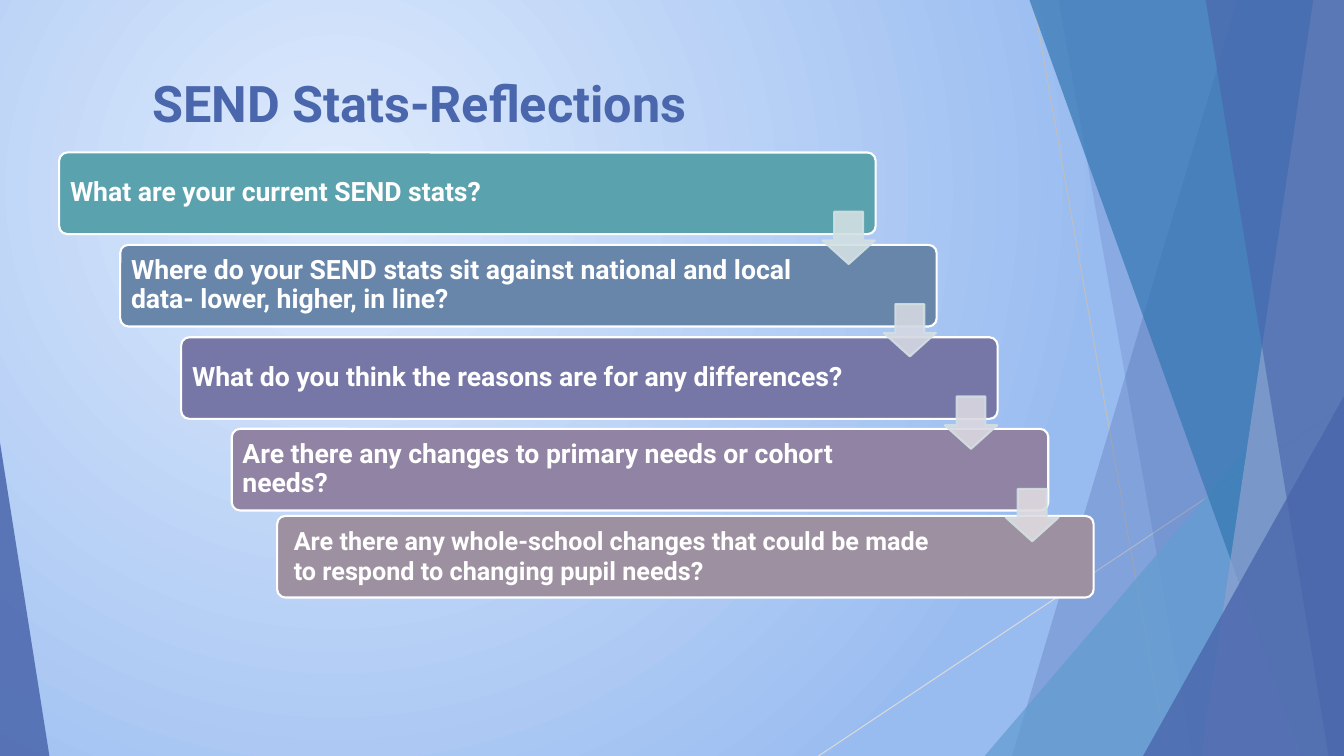
"""Build the SEND statistics reflection slide with its staircase of questions."""
from dataclasses import dataclass

from lxml import etree
from pptx import Presentation
from pptx import util as u
from pptx.dml.color import RGBColor
from pptx.dml.fill import FillFormat
from pptx.enum import shapes, text
from pptx.oxml.ns import qn
from pptx.shapes.autoshape import Shape
from pptx.slide import Slide
from pptx.text.text import TextFrame

WIDTH, HEIGHT = 960, 540
TOP_EDGE = -0.7
FONT = "Roboto"
BLUE, WHITE = "4A66AC", "FFFFFF"
CARD_WIDTH, CARD_HEIGHT = 583.2, 58.3
ARROW_SIZE = 37.4
ARROW_LEFT, ARROW_TOP = 587.5, 151.2
ARROW_STEP_X, ARROW_STEP_Y = 43.7, 66


@dataclass
class Ray:
    start: tuple[float, float]
    end: tuple[float, float]
    colour: str


@dataclass
class Band:
    top_left: float
    bottom_left: float
    colour: str
    opacity: int


@dataclass
class Corner:
    left: float
    top: float
    width: float
    apex: float
    colour: str
    opacity: int


@dataclass
class Label:
    left: float
    top: float
    width: float
    height: float = 54.7
    size: float = 19
    inset_x: float = 6
    inset_y: float = 6
    spacing: float = 0.9
    anchor: text.MSO_ANCHOR = text.MSO_ANCHOR.MIDDLE


@dataclass
class Question:
    wording: str
    left: float
    top: float
    colour: str
    label: Label


RAYS = [
    Ray((738, 0), (833.8, HEIGHT), "BFBFBF"),
    Ray((WIDTH, 290.2), (584.6, HEIGHT), "D9D9D9"),
]
FACETS = [
    Band(884.2, 722.9, BLUE, 30),
    Band(756, 851.8, BLUE, 20),
    Corner(703.4, 239.8, 256.6, 1, "629DD1", 72),
    Band(735.1, 929.5, "3477B2", 70),
    Band(938.2, 858.2, "90A2CF", 70),
    Band(861.1, 949, BLUE, 65),
    Corner(816.5, 283, 143.5, 1, BLUE, 80),
    Corner(0, 316.1, 35.3, 0, BLUE, 85),
]
QUESTIONS = [
    Question("What are your current SEND stats?",
             42.3, 108.9, "5AA2AE", Label(44, 110.7, 514)),
    Question("Where do your SEND stats sit against national and local data- lower, higher, in line?",
             85.9, 174.9, "6885AA", Label(87.6, 176.6, 498.2)),
    Question("What do you think the reasons are for any differences?",
             129.4, 240.9, "7677A6", Label(131.2, 242.6, 498.2)),
    Question("Are there any changes to primary needs or cohort needs?",
             165.6, 306.3, "9083A3", Label(167.2, 308, 498.2)),
    Question("Are there any whole-school changes that could be made to respond to changing pupil needs?",
             198, 368.5, "9D90A0",
             Label(202.8, 371.5, 480.2, 51, 18, 7.2, 3.6, 1, text.MSO_ANCHOR.TOP)),
]
ARROW_COLOURS = ["D2E0E3", "D5D8E2", "DAD8E0", "DFDBDF"]


def rgb(colour: str) -> RGBColor:
    return RGBColor.from_string(colour)


def paint(fill: FillFormat, colour: str) -> None:
    fill.solid()
    fill.fore_color.rgb = rgb(colour)


def style(shape: Shape, colour: str, outline: str | None = None, opacity: int = 100) -> None:
    shape.shadow.inherit = False
    paint(shape.fill, colour)
    if outline:
        paint(shape.line.fill, outline)
        shape.line.width = u.Pt(1.5)
    else:
        shape.line.fill.background()
    if opacity < 100:
        for tint in shape.element.spPr.iter(qn("a:srgbClr")):
            etree.SubElement(tint, qn("a:alpha")).set("val", str(opacity * 1000))


def add_preset(slide: Slide, preset: shapes.MSO_SHAPE, left: float, top: float,
               width: float, height: float, adjustments: list[float]) -> Shape:
    shape = slide.shapes.add_shape(preset, u.Pt(left), u.Pt(top), u.Pt(width), u.Pt(height))
    for index, value in enumerate(adjustments):
        shape.adjustments[index] = value
    return shape


def write(frame: TextFrame, wording: str, size: float, colour: str, spacing: float = 1) -> None:
    paragraph = frame.paragraphs[0]
    paragraph.alignment = text.PP_ALIGN.LEFT
    paragraph.line_spacing = spacing
    run = paragraph.add_run()
    run.text = wording
    run.font.name, run.font.size, run.font.bold = FONT, u.Pt(size), True
    run.font.color.rgb = rgb(colour)


def set_background(slide: Slide) -> None:
    fill = slide.background.fill
    fill.gradient()
    for stop, colour in zip(fill.gradient_stops, ["DFEBFD", "99BCF0"]):
        stop.color.rgb = rgb(colour)
    gradient = slide.element.find(".//" + qn("a:gradFill"))
    gradient.remove(gradient.find(qn("a:lin")))
    circle = etree.SubElement(gradient, qn("a:path"))
    circle.set("path", "circle")
    focus = etree.SubElement(circle, qn("a:fillToRect"))
    for side, percent in zip("ltrb", [50, 50, 100, 100]):
        focus.set(side, str(percent * 1000))


def add_ray(slide: Slide, ray: Ray) -> None:
    line = slide.shapes.add_connector(
        shapes.MSO_CONNECTOR.STRAIGHT, *map(u.Pt, ray.start + ray.end))
    paint(line.line.fill, ray.colour)
    line.line.width = u.Pt(0.75)
    etree.SubElement(line.element.spPr, qn("a:effectLst"))


def add_facet(slide: Slide, facet: Band | Corner) -> None:
    if isinstance(facet, Corner):
        shape = add_preset(slide, shapes.MSO_SHAPE.ISOSCELES_TRIANGLE, facet.left, facet.top,
                           facet.width, HEIGHT - facet.top, [facet.apex])
    else:
        builder = slide.shapes.build_freeform(u.Pt(facet.top_left), u.Pt(TOP_EDGE))
        corners = [(WIDTH, TOP_EDGE), (WIDTH, HEIGHT), (facet.bottom_left, HEIGHT)]
        builder.add_line_segments([(u.Pt(x), u.Pt(y)) for x, y in corners])
        shape = builder.convert_to_shape()
    style(shape, facet.colour, opacity=facet.opacity)


def set_title(slide: Slide, wording: str) -> None:
    title = slide.shapes.title
    title.left, title.top, title.width, title.height = map(u.Pt, (101.5, 48.2, 802.8, 86.4))
    title.text_frame.vertical_anchor = text.MSO_ANCHOR.TOP
    write(title.text_frame, wording, 36, BLUE)
    title.element.getparent().append(title.element)


def add_question(slide: Slide, question: Question) -> None:
    card = add_preset(slide, shapes.MSO_SHAPE.ROUNDED_RECTANGLE, question.left, question.top,
                      CARD_WIDTH, CARD_HEIGHT, [0.1])
    style(card, question.colour, WHITE)
    label = question.label
    box = slide.shapes.add_textbox(*map(u.Pt, (label.left, label.top, label.width, label.height)))
    frame = box.text_frame
    frame.word_wrap = True
    frame.vertical_anchor = label.anchor
    frame.margin_left = frame.margin_right = u.Pt(label.inset_x)
    frame.margin_top = frame.margin_bottom = u.Pt(label.inset_y)
    write(frame, question.wording, label.size, WHITE, label.spacing)


def main() -> None:
    presentation = Presentation()
    presentation.slide_width, presentation.slide_height = u.Pt(WIDTH), u.Pt(HEIGHT)
    slide = presentation.slides.add_slide(presentation.slide_layouts[5])
    set_background(slide)
    for ray in RAYS:
        add_ray(slide, ray)
    for facet in FACETS:
        add_facet(slide, facet)
    set_title(slide, "SEND Stats-Reflections")
    for question in QUESTIONS:
        add_question(slide, question)
    for index, colour in enumerate(ARROW_COLOURS):
        arrow = add_preset(slide, shapes.MSO_SHAPE.DOWN_ARROW, ARROW_LEFT + index * ARROW_STEP_X,
                           ARROW_TOP + index * ARROW_STEP_Y, ARROW_SIZE, ARROW_SIZE, [0.55, 0.45])
        style(arrow, colour, "D2E0E3", 90)
    presentation.save("out.pptx")


if __name__ == "__main__":
    main()
